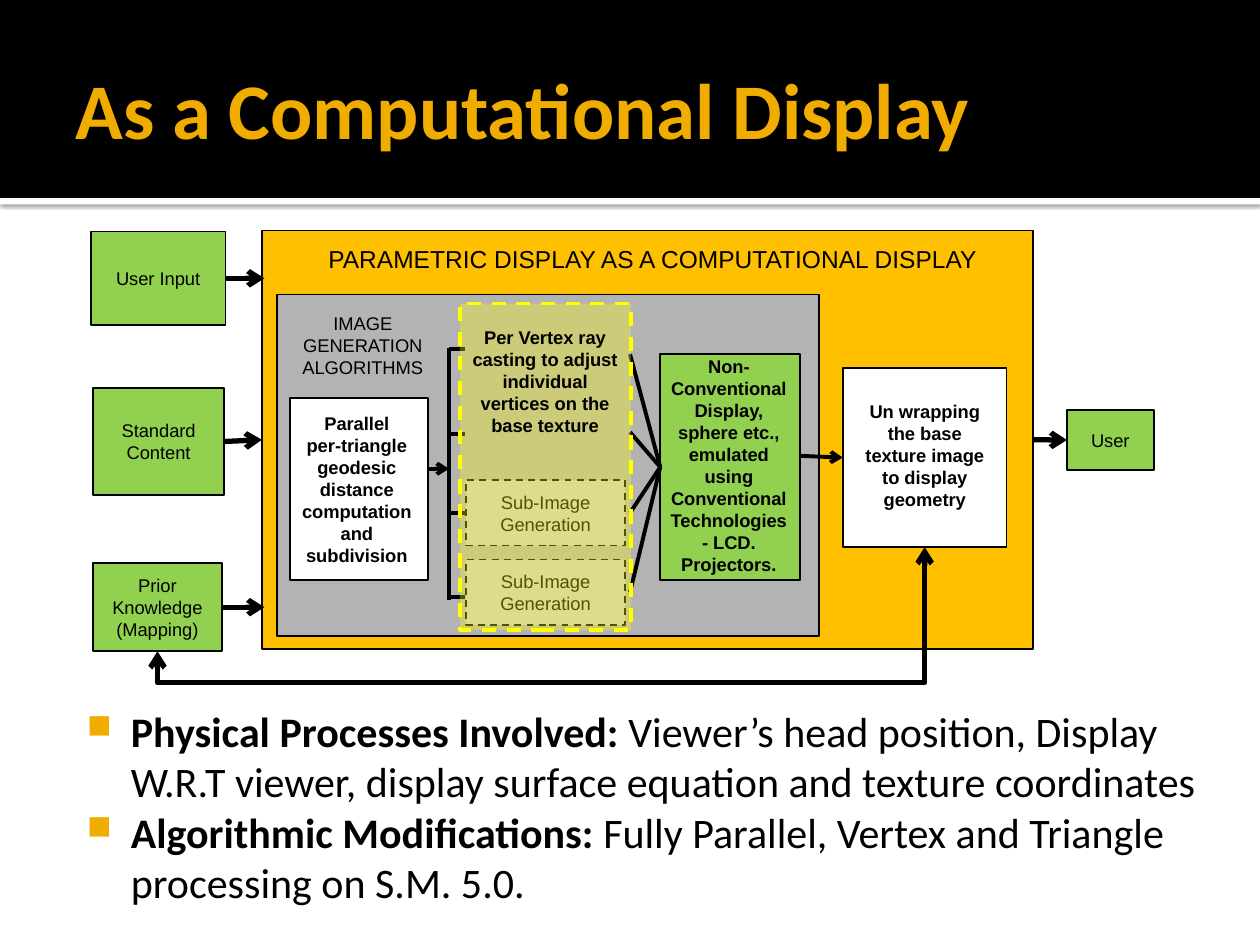
from dataclasses import dataclass
from typing import Optional

from lxml import etree
from pptx import Presentation
from pptx.dml.color import RGBColor
from pptx.enum.dml import MSO_LINE
from pptx.enum.shapes import MSO_CONNECTOR, MSO_SHAPE
from pptx.enum.text import MSO_ANCHOR, MSO_AUTO_SIZE, PP_ALIGN
from pptx.oxml.ns import qn
from pptx.util import Cm, Pt

RECTANGLE = MSO_SHAPE.RECTANGLE
STRAIGHT, ELBOW = MSO_CONNECTOR.STRAIGHT, MSO_CONNECTOR.ELBOW
DASH = MSO_LINE.DASH
TOP, MIDDLE = MSO_ANCHOR.TOP, MSO_ANCHOR.MIDDLE
LEFT_ALIGNED, CENTER = PP_ALIGN.LEFT, PP_ALIGN.CENTER
GROW = MSO_AUTO_SIZE.SHAPE_TO_FIT_TEXT
LEFT, BOTTOM, RIGHT = 1, 2, 3


@dataclass(frozen=True)
class Theme:
    black: str = "000000"
    white: str = "FFFFFF"
    gold: str = "F0AD00"
    amber: str = "FFC000"
    gray: str = "B3B3B3"
    light_gray: str = "CCCCCC"
    green: str = "92D050"
    yellow: str = "FFFF00"
    heading_font: str = "Calibri"
    diagram_font: str = "Arial"
    title_size: float = 45
    body_size: float = 24
    caption_size: float = 14
    label_size: float = 10.5


THEME = Theme()


@dataclass(frozen=True)
class Box:
    """A rectangle in centimetres; each line of text is a paragraph."""
    left: float
    top: float
    width: float
    height: float
    fill: Optional[str] = None
    text: tuple = ()
    line: Optional[str] = THEME.black
    line_width: float = 1
    dashed: bool = False


@dataclass(frozen=True)
class Label:
    left: float
    top: float
    width: float
    height: float
    text: tuple
    bold: bool = True
    size: float = THEME.label_size


@dataclass(frozen=True)
class Link:
    """A straight line; an end is a point in centimetres or (shape, side)."""
    start: tuple
    end: tuple
    width: float = 2.25
    arrow: bool = False


def rgb(color: str) -> RGBColor:
    return RGBColor.from_string(color)


def child(parent, tag: str, **attributes: str):
    return etree.SubElement(parent, qn(tag), attributes)


def frame(item) -> tuple:
    return tuple(Cm(v) for v in (item.left, item.top, item.width, item.height))


def add_run(paragraph, text: str, color: str = THEME.black, **formats) -> None:
    run = paragraph.add_run()
    run.text = text
    run.font.color.rgb = rgb(color)
    for attribute, value in formats.items():
        setattr(run.font, attribute, value)


def write_lines(text_frame, lines: tuple, size: float, bold: bool = False) -> None:
    text_frame.word_wrap = True
    for index, line in enumerate(lines):
        paragraph = text_frame.add_paragraph() if index else text_frame.paragraphs[0]
        paragraph.alignment = CENTER
        add_run(paragraph, line, name=THEME.diagram_font, size=Pt(size), bold=bold)


def draw_box(slide, box: Box):
    shape = slide.shapes.add_shape(RECTANGLE, *frame(box))
    shape.shadow.inherit = False
    shape.fill.solid()
    shape.fill.fore_color.rgb = rgb(box.fill)
    if box.line:
        shape.line.color.rgb = rgb(box.line)
        shape.line.width = Pt(box.line_width)
        if box.dashed:
            shape.line.dash_style = DASH
    else:
        shape.line.fill.background()
    if box.text:
        shape.text_frame.vertical_anchor = MIDDLE
        write_lines(shape.text_frame, box.text, THEME.label_size)
    return shape


def draw_label(slide, label: Label) -> None:
    text_frame = slide.shapes.add_textbox(*frame(label)).text_frame
    write_lines(text_frame, label.text, label.size, label.bold)
    text_frame.auto_size = GROW


def style_connector(connector, width: float, arrowheads: tuple = ()) -> None:
    connector.line.color.rgb = rgb(THEME.black)
    connector.line.width = Pt(width)
    properties = connector._element.spPr
    for head in arrowheads:
        child(properties.find(qn("a:ln")), head, type="arrow")
    child(properties, "a:effectLst")


def draw_link(slide, link: Link) -> None:
    ends = (link.start, link.end)
    points = [(0, 0) if hasattr(end[0], "shape_id") else (Cm(end[0]), Cm(end[1])) for end in ends]
    connector = slide.shapes.add_connector(STRAIGHT, *points[0], *points[1])
    for end, connect in zip(ends, (connector.begin_connect, connector.end_connect)):
        if hasattr(end[0], "shape_id"):
            connect(*end)
    style_connector(connector, link.width, ("a:tailEnd",) if link.arrow else ())


def draw_feedback(slide, source, target) -> None:
    """Join two bottom sides with a U-shaped, double-headed elbow."""
    x1, y1 = source.left + source.width // 2, source.top + source.height
    x2, y2 = target.left + target.width // 2, target.top + target.height
    width, height = y2 - y1, x1 - x2
    left, top = (x1 + x2 - width) // 2, (y1 + y2 - height) // 2
    connector = slide.shapes.add_connector(ELBOW, left, top, left + width, top + height)
    connector.begin_connect(source, BOTTOM)
    connector.end_connect(target, BOTTOM)
    connector.begin_x, connector.begin_y = left, top
    connector.end_x, connector.end_y = left + width, top + height
    properties = connector._element.spPr
    properties.find(qn("a:xfrm")).set("rot", "5400000")
    adjustments = properties.find(qn("a:prstGeom")).get_or_add_avLst()
    child(adjustments, "a:gd", name="adj1", fmla="val 130300")
    style_connector(connector, 3, ("a:headEnd", "a:tailEnd"))


def draw_header(slide) -> None:
    rule = draw_box(slide, Box(0, 3.99, 25.4, 0.13, THEME.white, line=None))
    effects = rule._element.spPr.find(qn("a:effectLst"))
    shadow = child(effects, "a:outerShdw", blurRad=str(Pt(2.5)), dist=str(Pt(0.8)), dir="5400000")
    child(child(shadow, "a:srgbClr", val=THEME.black), "a:alpha", val="60000")
    draw_box(slide, Box(0, 0, 25.4, 3.99, THEME.black, line=None))
    title = add_text_area(slide, (1.27, 0.43, 22.86, 3.48), (0.25, 0.13, 0.13, 0.13), MIDDLE)
    add_run(title.paragraphs[0], "As a Computational Display", THEME.gold,
            name=THEME.heading_font, size=Pt(THEME.title_size), bold=True)


def add_text_area(slide, area: tuple, insets: tuple, anchor):
    text_frame = slide.shapes.add_textbox(*map(Cm, area)).text_frame
    sides = ("margin_left", "margin_top", "margin_right", "margin_bottom")
    formats = dict(zip(sides, map(Cm, insets)), word_wrap=True, vertical_anchor=anchor)
    for attribute, value in formats.items():
        setattr(text_frame, attribute, value)
    return text_frame


def draw_bullets(slide, bullets: tuple) -> None:
    body = add_text_area(slide, (1.27, 13.97, 23.7, 5.08), (0.15, 0.25, 0.25, 0.13), TOP)
    for index, (lead, detail) in enumerate(bullets):
        paragraph = body.add_paragraph() if index else body.paragraphs[0]
        paragraph.alignment = LEFT_ALIGNED
        properties = paragraph._p.get_or_add_pPr()
        properties.set("marL", str(Cm(1.22)))
        properties.set("indent", str(Cm(-0.89)))
        child(child(properties, "a:buClr"), "a:srgbClr", val=THEME.gold)
        child(properties, "a:buSzPct", val="80000")
        child(properties, "a:buChar", char="■")
        for text, bold in ((lead, True), (detail, False)):
            add_run(paragraph, text, name=THEME.heading_font, size=Pt(THEME.body_size), bold=bold)


def draw_diagram(slide) -> None:
    sub_image = ("Sub-Image Generation",)
    panel, _, user, _, unwrapping, sub_image_1, _, content, knowledge, user_input, display = [
        draw_box(slide, box) for box in (
            Box(5.28, 4.65, 15.54, 8.43, THEME.amber),
            Box(5.59, 5.94, 10.92, 6.88, THEME.gray),
            Box(21.51, 8.26, 1.75, 1.22, THEME.green, ("User",)),
            Box(5.84, 8.03, 2.79, 3.66, THEME.white),
            Box(16.99, 7.42, 3.3, 3.61, THEME.white),
            Box(9.4, 9.68, 3.2, 1.32, THEME.light_gray, sub_image, dashed=True),
            Box(9.4, 11.28, 3.2, 1.32, THEME.light_gray, sub_image, dashed=True),
            Box(1.88, 7.82, 2.64, 2.16, THEME.green, ("Standard Content",)),
            Box(1.88, 11.35, 2.59, 1.78, THEME.green, ("Prior Knowledge", "(Mapping)")),
            Box(1.83, 4.67, 2.72, 1.88, THEME.green, ("User Input",)),
            Box(13.31, 7.14, 2.82, 4.55, THEME.green))]
    trunk_x = 9.05
    links = [
        Link((user_input, RIGHT), (5.33, 5.61), 3, True),
        Link((content, RIGHT), (panel, LEFT), 3, True),
        Link((knowledge, RIGHT), (5.33, 12.24), 3, True),
        Link((panel, RIGHT), (user, LEFT), 3, True),
        Link((8.61, 9.45), (trunk_x, 9.45), arrow=True),
        Link((16.15, 9.19), (unwrapping, LEFT), arrow=True),
        Link((trunk_x, 7.01), (trunk_x, 12.09)),
        Link((trunk_x, 10.34), (sub_image_1, LEFT))]
    links += [Link((trunk_x, y), (9.38, y)) for y in (7.04, 8.74, 12.04)]
    links += [Link((12.7, y), (display, LEFT)) for y in (7.14, 8.71, 10.34, 11.94)]
    for link in links:
        draw_link(slide, link)
    draw_feedback(slide, unwrapping, knowledge)

    ray_casting = draw_box(slide, Box(9.27, 6.12, 3.45, 6.58, THEME.yellow,
                                      line=THEME.yellow, line_width=2, dashed=True))
    tint = ray_casting._element.spPr.find(qn("a:solidFill")).find(qn("a:srgbClr"))
    child(tint, "a:alpha", val="32000")
    for label in (
            Label(5.59, 4.8, 15.14, 0.86, ("PARAMETRIC DISPLAY AS A COMPUTATIONAL DISPLAY",),
                  False, THEME.caption_size),
            Label(5.69, 6.17, 3.25, 1.6, ("IMAGE GENERATION ALGORITHMS",), False),
            Label(5.66, 8.18, 3.07, 3.4, ("Parallel", "per-triangle geodesic distance "
                                          "computation and subdivision")),
            Label(9.25, 6.45, 3.48, 2.49, ("Per Vertex ray casting to adjust individual "
                                           "vertices on the base texture",)),
            Label(13.16, 7.04, 3.07, 4.75, ("Non- Conventional Display, sphere etc., emulated using "
                                            "Conventional Technologies - LCD. Projectors.",)),
            Label(17.02, 7.95, 3.25, 2.49, ("Un wrapping the base texture image to display "
                                            "geometry",))):
        draw_label(slide, label)


def main() -> None:
    presentation = Presentation()
    presentation.slide_width, presentation.slide_height = Cm(25.4), Cm(19.05)
    slide = presentation.slides.add_slide(presentation.slide_layouts[6])
    draw_header(slide)
    draw_diagram(slide)
    draw_bullets(slide, (
        ("Physical Processes Involved:", " Viewer’s head position, Display W.R.T viewer, "
         "display surface equation and texture coordinates"),
        ("Algorithmic Modifications: ", "Fully Parallel, Vertex and Triangle processing on S.M. 5.0.")))
    presentation.save("out.pptx")


if __name__ == "__main__":
    main()
